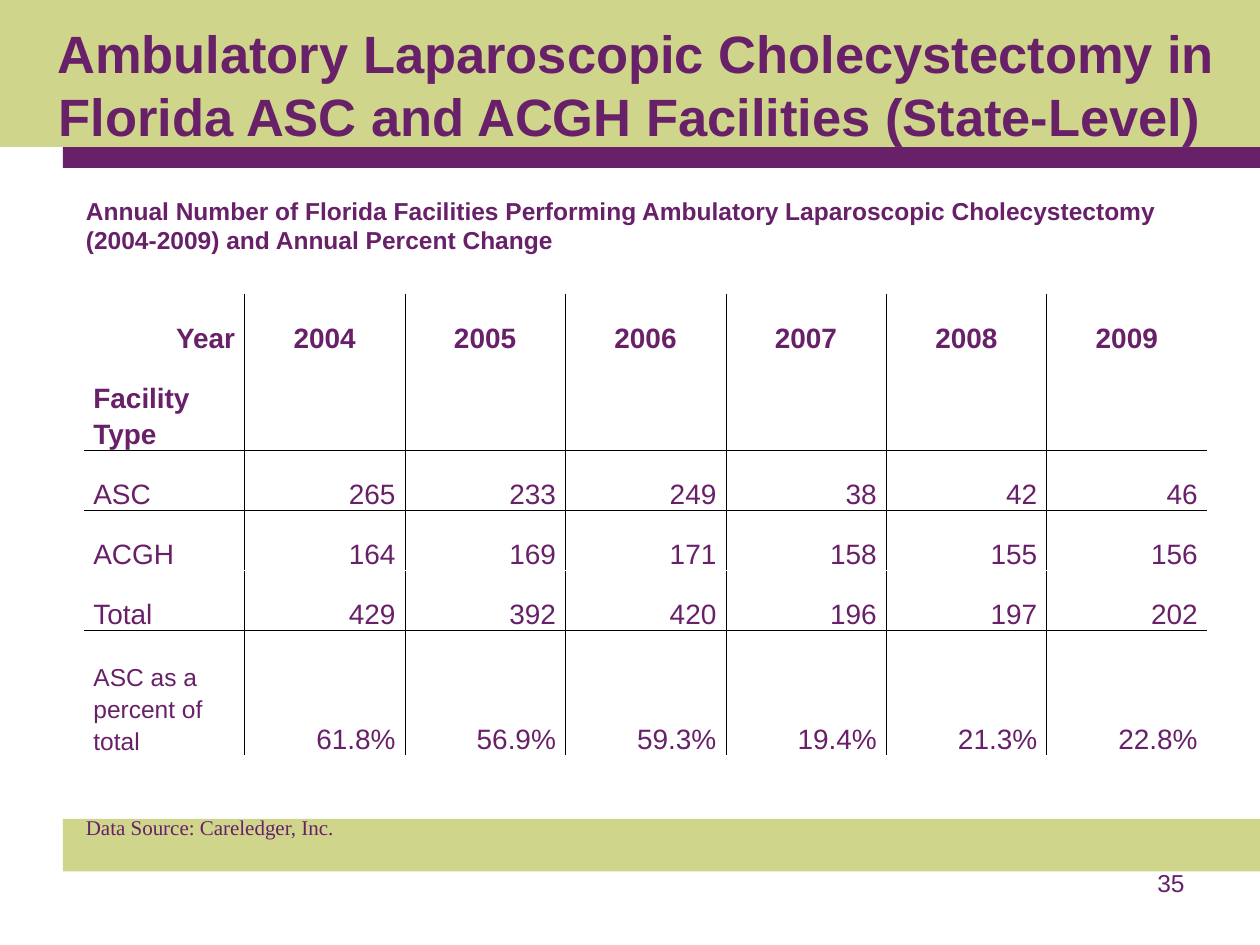
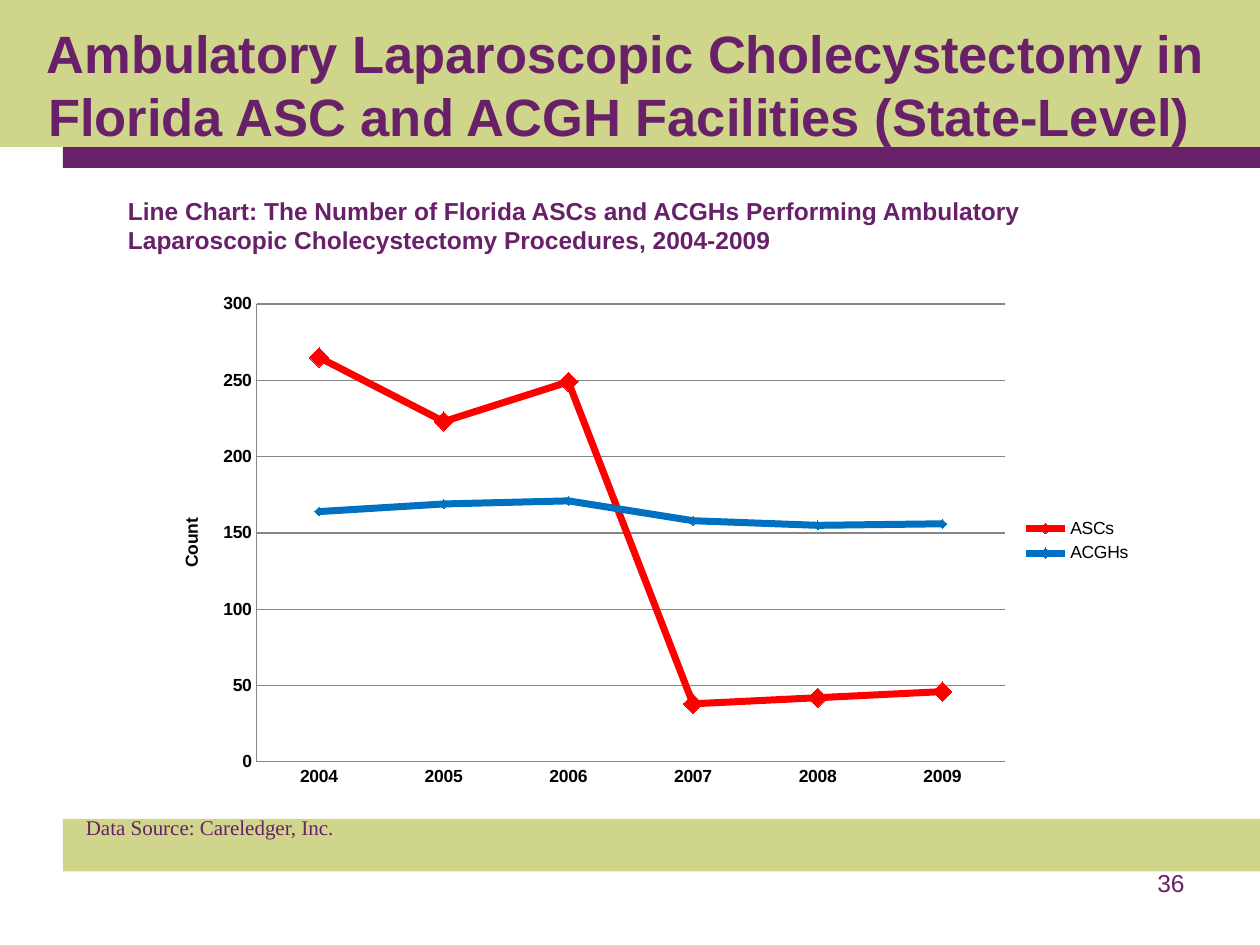
import pptx
import pptx.chart.data
import pptx.dml.color
import pptx.enum.chart
import pptx.enum.shapes
import pptx.enum.text
import pptx.oxml
import pptx.oxml.ns
import pptx.util
from dataclasses import dataclass

Pt = pptx.util.Pt
ALIGN = pptx.enum.text.PP_ALIGN
ANCHOR = pptx.enum.text.MSO_ANCHOR


@dataclass(frozen=True)
class Theme:
    green: str = "CFD58B"
    purple: str = "682069"
    black: str = "000000"
    white: str = "FFFFFF"
    grid: str = "868686"
    sans: str = "Arial"
    serif: str = "Times New Roman"
    title: int = 30
    table: int = 16
    body: int = 14
    source: int = 12
    chart: int = 10
    rule: float = 0.25


T = Theme()

TITLE = (" Ambulatory Laparoscopic Cholecystectomy in Florida "
         "ASC and ACGH Facilities (State-Level)")
SOURCE = "Data Source: Careledger, Inc."
BANDS = [
    (36, 468, 684, 30, T.green),
    (36, 66, 684, 30, T.purple),
    (0, 0, 720, 84, T.green),
]
YEARS = ["2004", "2005", "2006", "2007", "2008", "2009"]

TABLE_SLIDE = dict(
    number="35", title_left=18, heading_box=(42, 108, 654, 41),
    heading="Annual Number of Florida Facilities Performing Ambulatory Laparoscopic "
            "Cholecystectomy (2004-2009) and Annual Percent Change")
CHART_SLIDE = dict(
    number="36", title_left=12, heading_box=(66, 108, 588, 41),
    heading="Line Chart: The Number of Florida ASCs and ACGHs Performing Ambulatory "
            "Laparoscopic Cholecystectomy Procedures, 2004-2009")

ROWS = [
    ["Year"] + YEARS,
    ["Facility Type"] + [""] * len(YEARS),
    ["ASC", "265", "233", "249", "38", "42", "46"],
    ["ACGH", "164", "169", "171", "158", "155", "156"],
    ["Total", "429", "392", "420", "196", "197", "202"],
    ["ASC as a percent of total", "61.8%", "56.9%", "59.3%", "19.4%", "21.3%", "22.8%"],
]
ROW_HEIGHTS = [34.3, 55, 34.3, 34.3, 34.3, 71.5]
COL_WIDTH = 91.7
RULES_BELOW = {1: T.black, 2: T.black, 3: T.white, 4: T.black}

SERIES = [
    ("ASCs", [265, 223, 249, 38, 42, 46], "FF0000", 11),
    ("ACGHs", [164, 169, 171, 158, 155, 156], "0070C0", 5),
]


def rgb(value):
    return pptx.dml.color.RGBColor.from_string(value)


def style(font, size, color=T.purple, bold=False, name=T.sans):
    font.name, font.size, font.bold = name, Pt(size), bold
    font.color.rgb = rgb(color)


def add_text(s, box, text, size, bold=False, name=T.sans, align=ALIGN.LEFT,
             leading=None, inset=True):
    tf = s.shapes.add_textbox(*map(Pt, box)).text_frame
    tf.word_wrap = True
    if not inset:
        tf.margin_left = tf.margin_right = tf.margin_top = tf.margin_bottom = 0
    p = tf.paragraphs[0]
    p.text, p.alignment = text, align
    if leading:
        p.line_spacing = Pt(leading)
    style(p.font, size, bold=bold, name=name)


def add_frame(prs, number, title_left, heading_box, heading):
    s = prs.slides.add_slide(prs.slide_layouts[6])
    for *box, color in BANDS:
        sp = s.shapes.add_shape(pptx.enum.shapes.MSO_SHAPE.RECTANGLE, *map(Pt, box))
        sp.shadow.inherit = False
        sp.fill.solid()
        sp.fill.fore_color.rgb = rgb(color)
        sp.line.fill.background()
    add_text(s, (title_left, 12, 684, 72), TITLE, T.title, bold=True,
             align=ALIGN.CENTER, leading=36, inset=False)
    add_text(s, (42, 462, 180, 36), SOURCE, T.source, name=T.serif)
    add_text(s, heading_box, heading, T.body, bold=True, leading=17)
    add_text(s, (516, 492, 168, 37), number, T.body, align=ALIGN.RIGHT, leading=17)
    return s


def set_borders(cell, sides):
    tcPr = cell._tc.get_or_add_tcPr()
    for i, side in enumerate("LRTB"):
        color = sides.get(side)
        fill = f'<a:solidFill><a:srgbClr val="{color}"/></a:solidFill>' if color else "<a:noFill/>"
        tcPr.insert(i, pptx.oxml.parse_xml(
            f'<a:ln{side} {pptx.oxml.ns.nsdecls("a")} w="{Pt(T.rule)}">{fill}</a:ln{side}>'))


def add_facility_table(s):
    n_rows, n_cols = len(ROWS), len(ROWS[0])
    tbl = s.shapes.add_table(n_rows, n_cols, Pt(48), Pt(168),
                             Pt(COL_WIDTH * n_cols), Pt(sum(ROW_HEIGHTS))).table
    tbl.first_row = tbl.horz_banding = False
    for col in tbl.columns:
        col.width = Pt(COL_WIDTH)
    for i, values in enumerate(ROWS):
        tbl.rows[i].height = Pt(ROW_HEIGHTS[i])
        for j, value in enumerate(values):
            cell = tbl.cell(i, j)
            cell.fill.background()
            cell.vertical_anchor = ANCHOR.BOTTOM
            cell.margin_left = cell.margin_right = Pt(5.4)
            cell.margin_top = cell.margin_bottom = 0
            p = cell.text_frame.paragraphs[0]
            p.text, p.line_spacing = value, 1.15
            if i == 0 and j > 0:
                p.alignment = ALIGN.CENTER
            else:
                p.alignment = ALIGN.RIGHT if i == 0 or j > 0 else ALIGN.LEFT
            is_note = i == n_rows - 1 and j == 0
            style(p.font, T.body if is_note else T.table, bold=i < 2)
            set_borders(cell, {
                "L": T.black if j > 0 else None,
                "R": T.black if j < n_cols - 1 else None,
                "T": RULES_BELOW.get(i - 1),
                "B": RULES_BELOW.get(i),
            })


def manual_layout(target=None, **fractions):
    inner = f'<c:layoutTarget val="{target}"/>' if target else ""
    inner += "".join(f'<c:{k}Mode val="edge"/>' for k in "xy")
    inner += "".join(f'<c:{k} val="{v}"/>' for k, v in fractions.items())
    return pptx.oxml.parse_xml(
        f'<c:layout {pptx.oxml.ns.nsdecls("c")}><c:manualLayout>{inner}'
        '</c:manualLayout></c:layout>')


def replace_layout(parent, index, layout):
    for old in parent.findall(pptx.oxml.ns.qn("c:layout")):
        parent.remove(old)
    parent.insert(index, layout)


def add_count_chart(s):
    enum = pptx.enum.chart
    data = pptx.chart.data.CategoryChartData()
    data.categories = YEARS
    for name, values, _, _ in SERIES:
        data.add_series(name, values)
    chart = s.shapes.add_chart(enum.XL_CHART_TYPE.LINE_MARKERS, Pt(84), Pt(162),
                               Pt(570), Pt(294), data).chart
    chart.has_title = False
    style(chart.font, T.chart, T.black)
    chart.has_legend = True
    chart.legend.position = enum.XL_LEGEND_POSITION.RIGHT
    chart.legend.include_in_layout = False

    for axis in (chart.category_axis, chart.value_axis):
        axis.major_tick_mark = axis.minor_tick_mark = enum.XL_TICK_MARK.NONE
        axis.format.line.color.rgb = rgb(T.grid)
        style(axis.tick_labels.font, T.chart, T.black, bold=True)
    counts = chart.value_axis
    counts.minimum_scale, counts.maximum_scale, counts.major_unit = 0, 300, 50
    counts.has_major_gridlines = True
    counts.major_gridlines.format.line.color.rgb = rgb(T.grid)
    p = counts.axis_title.text_frame.paragraphs[0]
    p.text = "Count"
    style(p.font, T.chart, T.black, bold=True)
    replace_layout(counts.axis_title._element, 1, manual_layout(x=0.03, y=0.45))
    replace_layout(chart._chartSpace.chart.plotArea, 0,
                   manual_layout("inner", x=0.11, y=0.04, w=0.75, h=0.89))

    for series, (_, _, color, size) in zip(chart.plots[0].series, SERIES):
        series.smooth = False
        series.format.line.width = Pt(4)
        series.format.line.color.rgb = rgb(color)
        marker = series.marker
        marker.style, marker.size = enum.XL_MARKER_STYLE.DIAMOND, size
        marker.format.fill.solid()
        marker.format.fill.fore_color.rgb = rgb(color)
        marker.format.line.color.rgb = rgb(color)


def main():
    prs = pptx.Presentation()
    prs.slide_width, prs.slide_height = Pt(720), Pt(540)
    add_facility_table(add_frame(prs, **TABLE_SLIDE))
    add_count_chart(add_frame(prs, **CHART_SLIDE))
    prs.save("out.pptx")


if __name__ == "__main__":
    main()
